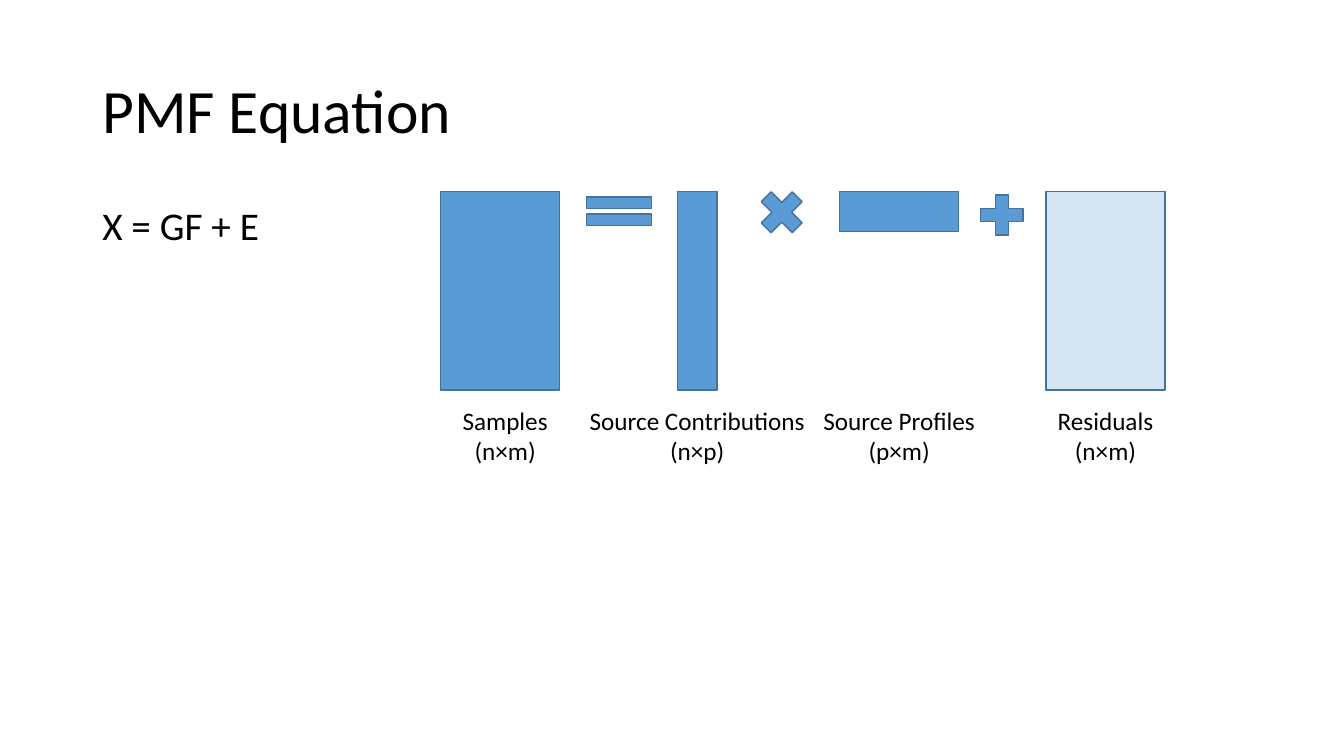
"""Builds a slide that shows the PMF equation as a row of matrices."""
from lxml import etree
from pptx import Presentation
from pptx.dml.color import RGBColor
from pptx.enum.shapes import MSO_SHAPE
from pptx.enum.text import MSO_ANCHOR, PP_ALIGN
from pptx.oxml.ns import qn
from pptx.util import Cm, Pt

RECT, PROCESS = MSO_SHAPE.RECTANGLE, MSO_SHAPE.FLOWCHART_PROCESS
EQUAL, TIMES, PLUS = MSO_SHAPE.MATH_EQUAL, MSO_SHAPE.MATH_MULTIPLY, MSO_SHAPE.MATH_PLUS
TOP, MIDDLE = MSO_ANCHOR.TOP, MSO_ANCHOR.MIDDLE
LEFT, CENTER = PP_ALIGN.LEFT, PP_ALIGN.CENTER

COLORS = {"fill": "5B9BD5", "line": "43739E", "text": "000000"}
FONT = "Calibri"
TITLE = "PMF Equation"
EQUATION = "X = GF + E"

# name, size label, shape, centre, width, height, opacity %, label centre, label width
MATRICES = [
    ("Samples", "(n×m)", PROCESS, 12.6, 3, 5, 100, 12.73, 2.7),
    ("Source Contributions", "(n×p)", RECT, 17.57, 1, 5, 100, 17.57, 6),
    ("Source Profiles", "(p×m)", RECT, 22.66, 3, 1, 100, 22.66, 4.36),
    ("Residuals", "(n×m)", PROCESS, 27.86, 3, 5, 25, 27.86, 2.94),
]
# shape, left, top, width, height
OPERATORS = [
    (EQUAL, 14.48, 4.71, 2.23, 1.23),
    (TIMES, 18.95, 4.6, 1.5, 1.5),
    (PLUS, 24.52, 4.73, 1.46, 1.37),
]
MATRIX_TOP = 4.83
LABEL_TOP, LABEL_HEIGHT = 10.08, 1.8
TEXT_LEFT, TEXT_WIDTH = 2.33, 29.21


def add_solid(s, kind, left, top, width, height, opacity=100):
    sp = s.shapes.add_shape(kind, Cm(left), Cm(top), Cm(width), Cm(height))
    sp.shadow.inherit = False
    sp.fill.solid()
    sp.fill.fore_color.rgb = RGBColor.from_string(COLORS["fill"])
    sp.line.color.rgb = RGBColor.from_string(COLORS["line"])
    sp.line.width = Pt(1)
    if opacity < 100:
        color = sp._element.spPr.find(qn("a:solidFill"))[0]
        etree.SubElement(color, qn("a:alpha")).set("val", str(opacity * 1000))


def add_text(s, lines, left, top, width, height, size, align=LEFT,
             anchor=TOP, wrap=True, spacing=1.0, before=0):
    tf = s.shapes.add_textbox(Cm(left), Cm(top), Cm(width), Cm(height)).text_frame
    tf.word_wrap = wrap
    tf.vertical_anchor = anchor
    tf.text = "\n".join(lines)
    for p in tf.paragraphs:
        p.alignment = align
        p.line_spacing = spacing
        p.space_before = Pt(before)
        p.font.name = FONT
        p.font.size = Pt(size)
        p.font.color.rgb = RGBColor.from_string(COLORS["text"])


def main():
    prs = Presentation()
    prs.slide_width, prs.slide_height = Cm(33.87), Cm(19.05)
    s = prs.slides.add_slide(prs.slide_layouts[6])

    add_text(s, [TITLE], TEXT_LEFT, 1.01, TEXT_WIDTH, 3.68, 44,
             anchor=MIDDLE, spacing=0.9)
    add_text(s, [EQUATION], TEXT_LEFT, 5.07, TEXT_WIDTH, 12.09, 28,
             spacing=0.9, before=10)

    for name, dims, kind, center, width, height, opacity, label_center, label_width in MATRICES:
        add_solid(s, kind, center - width / 2, MATRIX_TOP, width, height, opacity)
        add_text(s, [name, dims], label_center - label_width / 2, LABEL_TOP,
                 label_width, LABEL_HEIGHT, 18, align=CENTER, wrap=False)
    for operator in OPERATORS:
        add_solid(s, *operator)

    prs.save("out.pptx")


if __name__ == "__main__":
    main()
